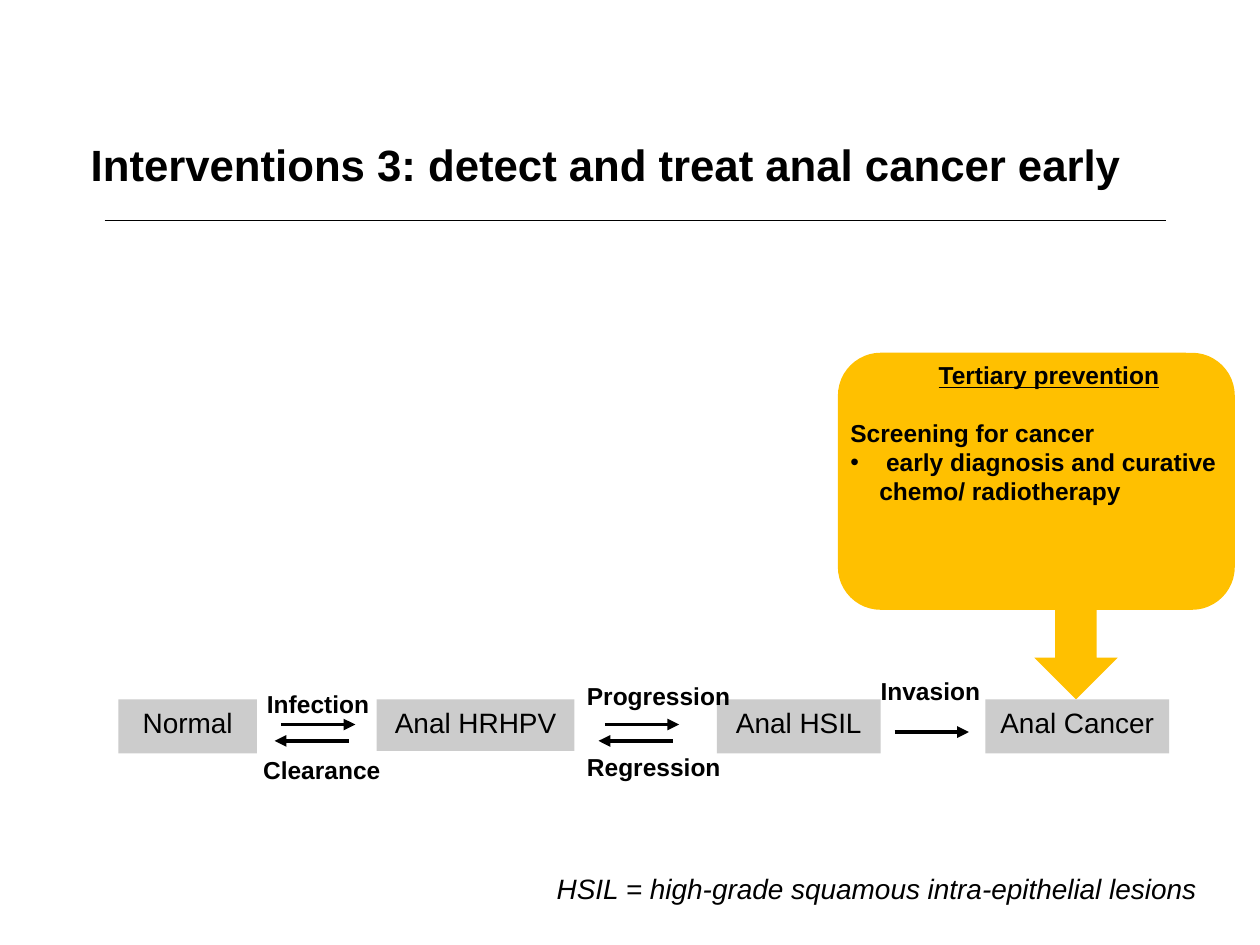
"""Builds a slide on detecting and treating anal cancer early."""
from lxml import etree
from pptx import Presentation
from pptx import util as u
from pptx.dml.color import RGBColor
from pptx.enum import shapes, text
from pptx.oxml.ns import qn

TITLE = "Interventions 3: detect and treat anal cancer early"
STAGES = [
    ("Normal", 0.94, 1.1, 0.43),
    ("Anal HRHPV", 2.99, 1.57, 0.41),
    ("Anal HSIL", 5.69, 1.3, 0.43),
    ("Anal Cancer", 7.82, 1.46, 0.43),
]
LABELS = [
    ("Infection", 2.02, 5.42, 1.02),
    ("Clearance", 1.99, 5.94, 1.14),
    ("Progression", 4.56, 5.36, 1.34),
    ("Regression", 4.56, 5.92, 1.27),
    ("Invasion", 6.89, 5.32, 0.99),
]
ARROWS = [(2.23, 5.75, 1), (2.77, 5.88, -1), (4.8, 5.75, 1), (5.34, 5.88, -1), (7.1, 5.81, 1)]
PREVENTION = ["Tertiary prevention", "Screening for cancer",
              " early diagnosis and curative chemo/ radiotherapy"]
FOOTNOTE = "HSIL = high-grade squamous intra-epithelial lesions"
STAGE_TOP, ARROW_LENGTH, BULLET_INDENT = 5.55, 0.59, 0.23
THEME = {
    "font": "Arial", "ink": RGBColor(0, 0, 0),
    "stage": RGBColor(0xCC, 0xCC, 0xCC), "callout": RGBColor(0xFF, 0xC0, 0),
    "title": 25, "body": 16, "label": 14,
}


def add_run(p, words, size, **style):
    r = p.add_run()
    r.text = words
    r.font.name, r.font.size = THEME["font"], u.Pt(THEME[size])
    r.font.color.rgb = THEME["ink"]
    for name, value in style.items():
        setattr(r.font, name, value)


def add_block(s, kind, box, fill):
    sp = s.shapes.add_shape(kind, *map(u.Inches, box))
    sp.shadow.inherit = False
    sp.fill.solid()
    sp.fill.fore_color.rgb = THEME[fill]
    sp.line.fill.background()
    return sp


def add_text(s, box, wrap=False):
    tf = s.shapes.add_textbox(*map(u.Inches, box)).text_frame
    tf.word_wrap = wrap
    tf.auto_size = text.MSO_AUTO_SIZE.SHAPE_TO_FIT_TEXT
    return tf


def add_line(s, x1, x2, y, width, arrow=False):
    cx = s.shapes.add_connector(shapes.MSO_CONNECTOR.STRAIGHT, *map(u.Inches, (x1, y, x2, y)))
    cx.line.color.rgb, cx.line.width = THEME["ink"], u.Pt(width)
    if arrow:
        etree.SubElement(cx.line._get_or_add_ln(), qn("a:tailEnd"), type="triangle")
    etree.SubElement(cx._element.spPr, qn("a:effectLst"))


def add_title(s):
    sp = s.shapes.title
    sp.left, sp.top, sp.width, sp.height = map(u.Inches, (0.62, 1.04, 8.97, 0.67))
    tf = sp.text_frame
    tf.vertical_anchor = text.MSO_ANCHOR.TOP
    p = tf.paragraphs[0]
    p.alignment = text.PP_ALIGN.LEFT
    add_run(p, TITLE, "title", bold=True)
    add_line(s, 0.83, 9.25, 1.75, 0.75)


def add_stages(s):
    for name, left, width, height in STAGES:
        sp = add_block(s, shapes.MSO_SHAPE.RECTANGLE, (left, STAGE_TOP, width, height), "stage")
        tf = sp.text_frame
        tf.vertical_anchor = text.MSO_ANCHOR.TOP
        tf.word_wrap = True
        p = tf.paragraphs[0]
        p.alignment = text.PP_ALIGN.CENTER
        add_run(p, name, "body")
    for x, y, direction in ARROWS:
        add_line(s, x, x + direction * ARROW_LENGTH, y, 2.25, arrow=True)
    for words, left, top, width in LABELS:
        add_run(add_text(s, (left, top, width, 0.34)).paragraphs[0], words, "label", bold=True)


def add_prevention(s):
    add_block(s, shapes.MSO_SHAPE.ROUNDED_RECTANGLE, (6.65, 2.8, 3.15, 2.04), "callout")
    tf = add_text(s, (6.65, 2.81, 3.35, 1.28), wrap=True)
    heading, lead, item = tf.paragraphs[0], tf.add_paragraph(), tf.add_paragraph()
    heading.alignment = text.PP_ALIGN.CENTER
    lead.space_before = u.Pt(16)
    pPr = item._p.get_or_add_pPr()
    pPr.set("marL", str(u.Inches(BULLET_INDENT)))
    pPr.set("indent", str(-u.Inches(BULLET_INDENT)))
    etree.SubElement(pPr, qn("a:buFont"), typeface=THEME["font"])
    etree.SubElement(pPr, qn("a:buChar"), char="•")
    for p, words in zip(tf.paragraphs, PREVENTION):
        add_run(p, words, "label", bold=True, underline=words == PREVENTION[0])


def main():
    prs = Presentation()
    prs.slide_width, prs.slide_height = u.Inches(10), u.Inches(7.5)
    s = prs.slides.add_slide(prs.slide_layouts[5])
    add_title(s)
    add_block(s, shapes.MSO_SHAPE.DOWN_ARROW, (8.21, 3.47, 0.66, 2.08), "callout")
    add_stages(s)
    add_prevention(s)
    add_run(add_text(s, (4.32, 6.87, 5.34, 0.37)).paragraphs[0], FOOTNOTE, "body", italic=True)
    prs.save("out.pptx")


if __name__ == "__main__":
    main()
